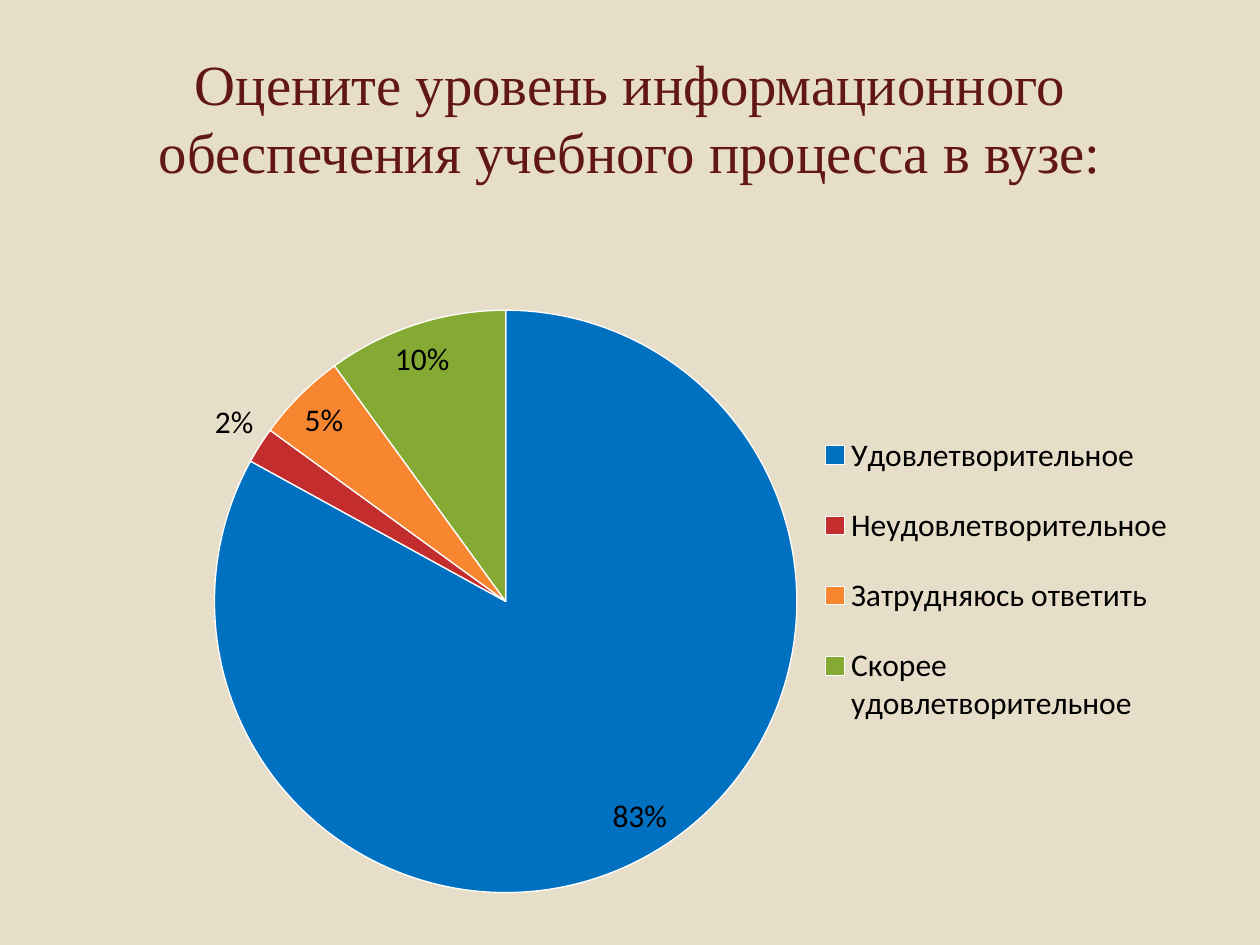
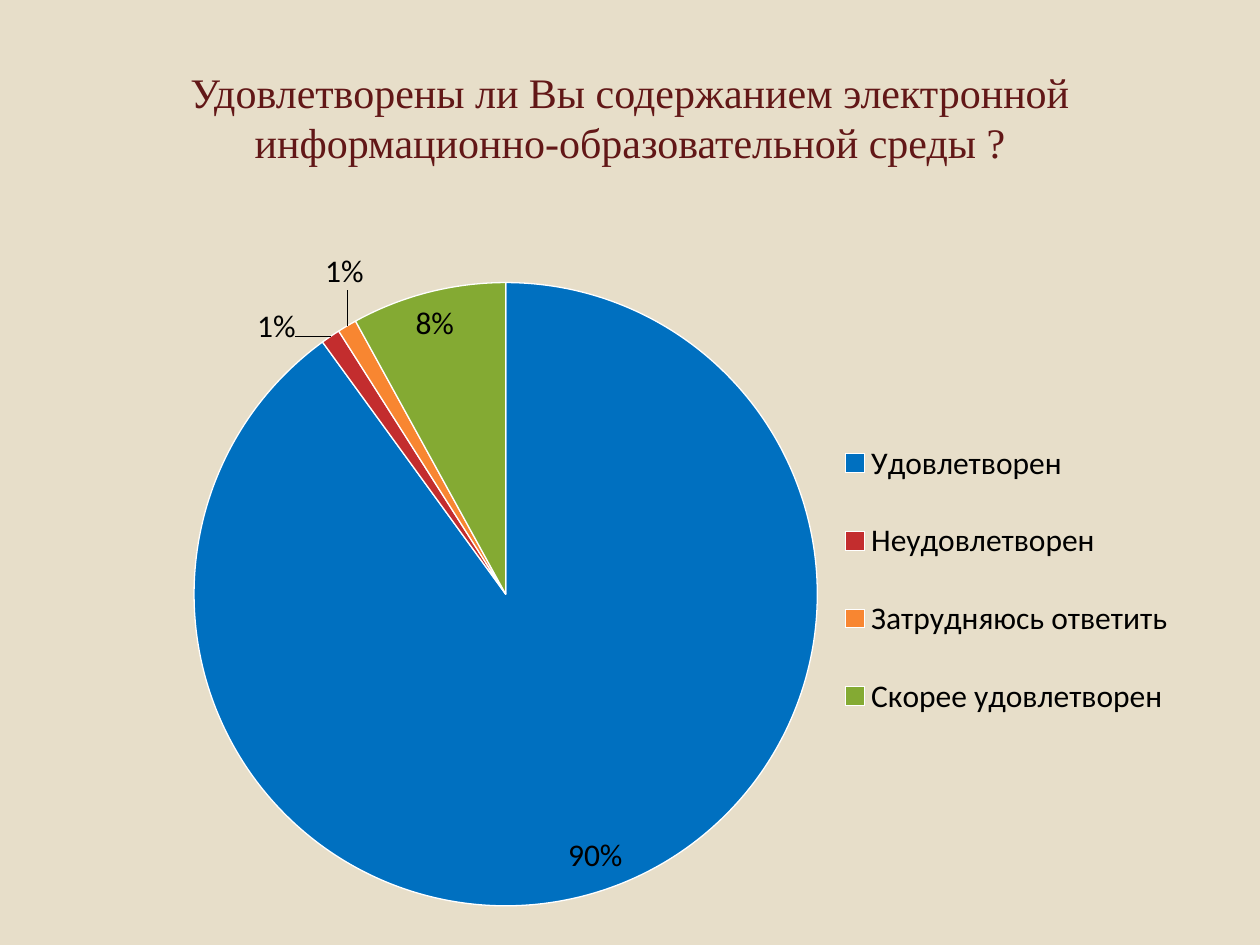
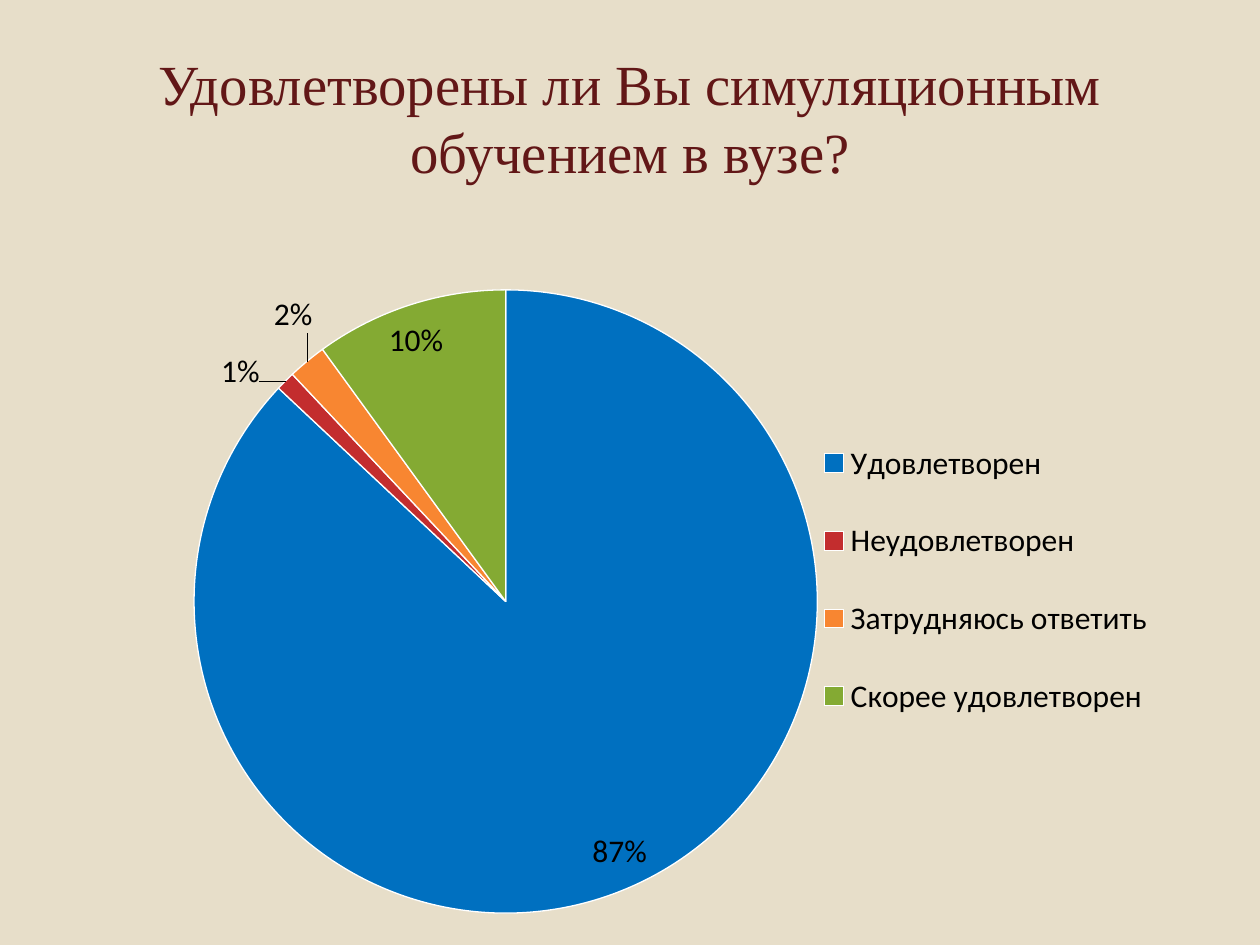
from dataclasses import dataclass

import lxml.etree
import pptx
import pptx.chart.data
import pptx.dml.color
import pptx.enum.chart
import pptx.enum.text
import pptx.oxml.ns
import pptx.util
from pptx.util import Cm

TITLE_ONLY = 5


@dataclass(frozen=True)
class Theme:
    background: str = "E7DEC9"
    title: str = "621717"
    text: str = "000000"
    outline: str = "FFFFFF"
    slices: tuple = ("0070C0", "C32D2E", "F88631", "84AA33")
    title_font: str = "Times New Roman"
    chart_font: str = "Calibri"
    title_size: float = 32.4
    long_title_size: float = 24
    chart_size: float = 18


@dataclass(frozen=True)
class Question:
    """One survey question; areas are x, y, w, h as fractions of the chart.

    label_shifts maps an answer's index to the x, y shift of its label.
    """
    title: str
    title_size: float
    answers: tuple
    shares: tuple
    pie_area: tuple
    legend_area: tuple
    label_shifts: dict


THEME = Theme()
SATISFACTION = ("Удовлетворен", "Неудовлетворен", "Затрудняюсь ответить",
                "Скорее удовлетворен")
QUESTIONS = (
    Question(
        "Оцените уровень информационного обеспечения учебного процесса в вузе:",
        THEME.title_size,
        ("Удовлетворительное", "Неудовлетворительное", "Затрудняюсь ответить",
         "Скорее удовлетворительное"),
        (83, 2, 5, 10),
        (0.04, 0.13, 0.57, 0.8), (0.62, 0.26, 0.37, 0.48), {}),
    Question(
        "Удовлетворены ли Вы содержанием электронной "
        "информационно-образовательной среды ?",
        THEME.long_title_size, SATISFACTION, (90, 1, 1, 8),
        (0.02, 0.09, 0.61, 0.86), (0.64, 0.26, 0.35, 0.48),
        {1: (-0.03, 0.02), 2: (0.02, -0.04)}),
    Question(
        "Удовлетворены ли Вы симуляционным обучением в вузе?",
        THEME.title_size, SATISFACTION, (87, 1, 2, 10),
        (0.02, 0.1, 0.61, 0.86), (0.62, 0.26, 0.35, 0.48),
        {1: (-0.02, 0.02), 2: (0.01, -0.03)}),
)


def rgb(value):
    return pptx.dml.color.RGBColor.from_string(value)


def style_font(font, name, size, color):
    font.name = name
    font.size = pptx.util.Pt(size)
    font.color.rgb = rgb(color)


def style_chart_font(font):
    style_font(font, THEME.chart_font, THEME.chart_size, THEME.text)


def set_layout(parent, index, **settings):
    """Give a chart part a manual layout as its child at the index."""
    qn = pptx.oxml.ns.qn
    for old_layout in parent.findall(qn("c:layout")):
        parent.remove(old_layout)
    layout = lxml.etree.Element(qn("c:layout"))
    manual = lxml.etree.SubElement(layout, qn("c:manualLayout"))
    for name, value in settings.items():
        lxml.etree.SubElement(manual, qn(f"c:{name}")).set("val", str(value))
    parent.insert(index, layout)


def set_area(parent, index, area, **target):
    x, y, w, h = area
    set_layout(parent, index, **target, xMode="edge", yMode="edge",
               x=x, y=y, w=w, h=h)


def add_title(slide, text, size):
    title = slide.shapes.title
    title.left, title.top = Cm(1.27), Cm(0.76)
    title.width, title.height = Cm(22.86), Cm(3.18)
    frame = title.text_frame
    frame.word_wrap = True
    frame.auto_size = pptx.enum.text.MSO_AUTO_SIZE.NONE
    frame.vertical_anchor = pptx.enum.text.MSO_ANCHOR.MIDDLE
    paragraph = frame.paragraphs[0]
    paragraph.alignment = pptx.enum.text.PP_ALIGN.CENTER
    run = paragraph.add_run()
    run.text = text
    style_font(run.font, THEME.title_font, size, THEME.title)


def color_slices(shares):
    for index, color in enumerate(THEME.slices):
        slice_format = shares.points[index].format
        slice_format.fill.solid()
        slice_format.fill.fore_color.rgb = rgb(color)
        slice_format.line.color.rgb = rgb(THEME.outline)
        slice_format.line.width = pptx.util.Pt(0.75)


def label_slices(chart, shares, shifts):
    best_fit = pptx.enum.chart.XL_LABEL_POSITION.BEST_FIT
    labels = shares.data_labels
    labels.show_percentage = True
    labels.show_value = False
    labels.number_format = "0%"
    labels.number_format_is_linked = False
    labels.position = best_fit
    style_chart_font(labels.font)
    for index, (x, y) in shifts.items():
        label = shares.points[index].data_label
        style_chart_font(label.font)
        label.position = best_fit
        label_xml = chart.element.xpath(f".//c:dLbl[c:idx/@val='{index}']")[0]
        set_layout(label_xml, 1, x=x, y=y)
        for tag, shown in (("c:showVal", "0"), ("c:showPercent", "1")):
            label_xml.find(pptx.oxml.ns.qn(tag)).set("val", shown)


def add_legend(chart, area):
    chart.has_legend = True
    legend = chart.legend
    legend.position = pptx.enum.chart.XL_LEGEND_POSITION.RIGHT
    legend.include_in_layout = False
    style_chart_font(legend.font)
    set_area(chart.element.xpath(".//c:legend")[0], 1, area)


def add_answer_pie(slide, question):
    data = pptx.chart.data.CategoryChartData()
    data.categories = question.answers
    data.add_series("Series 1", question.shares)
    chart = slide.shapes.add_chart(
        pptx.enum.chart.XL_CHART_TYPE.PIE,
        Cm(3.5), Cm(4.32), Cm(20.6), Cm(14.73), data).chart
    chart.has_title = False
    style_chart_font(chart.font)
    pie = chart.plots[0]
    pie.vary_by_categories = True
    shares = pie.series[0]
    color_slices(shares)
    label_slices(chart, shares, question.label_shifts)
    set_area(chart.element.xpath(".//c:plotArea")[0], 0, question.pie_area,
             layoutTarget="inner")
    add_legend(chart, question.legend_area)


def main():
    deck = pptx.Presentation()
    deck.slide_width, deck.slide_height = Cm(25.4), Cm(19.05)
    background = deck.slide_master.background.fill
    background.solid()
    background.fore_color.rgb = rgb(THEME.background)
    for question in QUESTIONS:
        slide = deck.slides.add_slide(deck.slide_layouts[TITLE_ONLY])
        add_title(slide, question.title, question.title_size)
        add_answer_pie(slide, question)
    deck.save("out.pptx")


if __name__ == "__main__":
    main()
